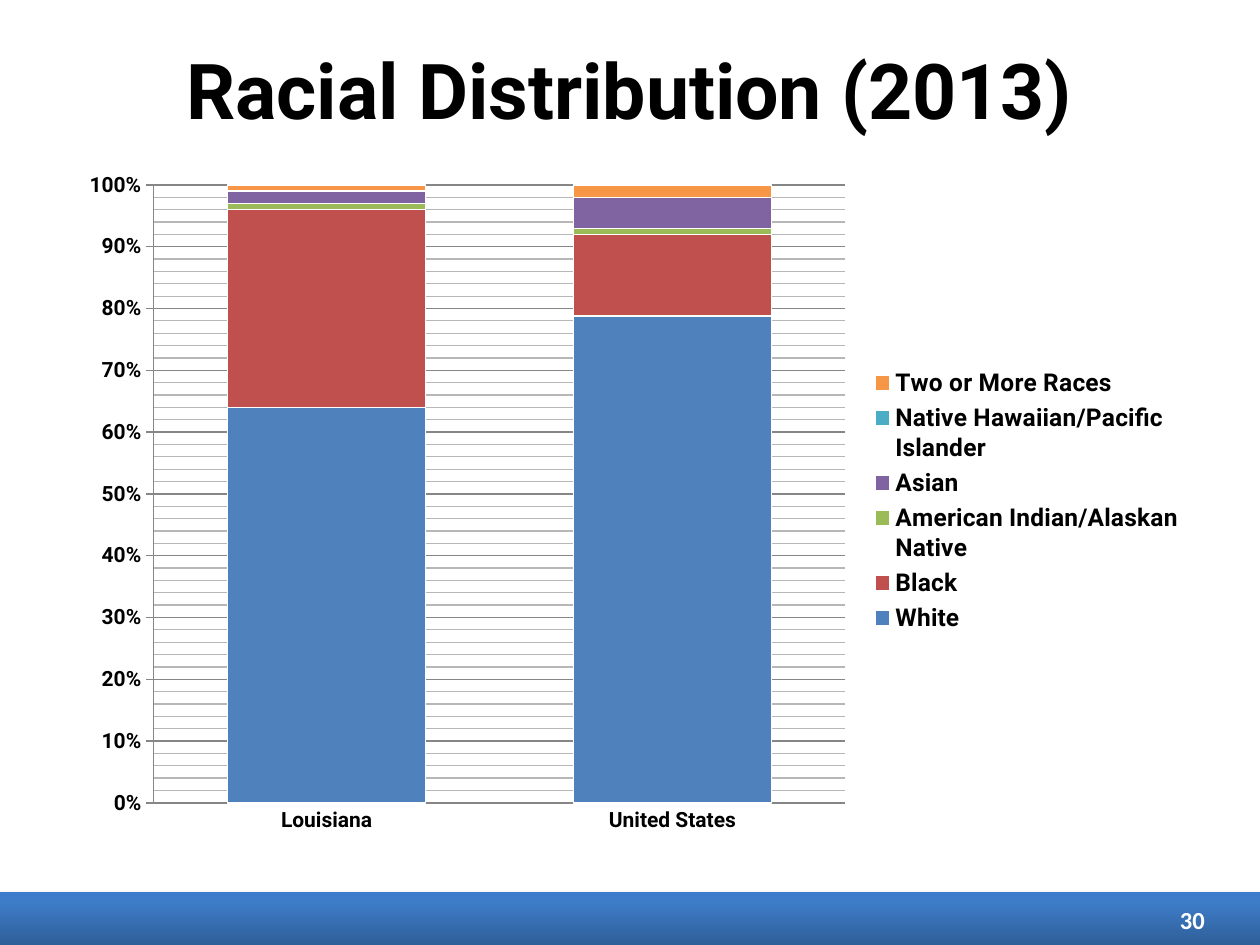
import copy
from dataclasses import dataclass

import lxml.etree
import pptx
import pptx.chart.data
import pptx.dml.color
import pptx.enum.chart
import pptx.enum.shapes
import pptx.enum.text
import pptx.oxml
import pptx.oxml.ns
import pptx.util

Inches = pptx.util.Inches
qn = pptx.oxml.ns.qn


@dataclass(frozen=True)
class Theme:
    font: str = "Roboto"
    number_font: str = "Calibri"
    ink: str = "000000"
    paper: str = "FFFFFF"
    axis: str = "868686"
    minor_grid: str = "B7B7B7"
    band: tuple = ((0, "2F5F99"), (0.8, "3D7CC7"), (1, "3A7CCB"))
    title_size: int = 44
    number_size: int = 14
    legend_size: int = 14
    axis_size: int = 12
    chart_size: int = 10


THEME = Theme()
REGIONS = ("Louisiana", "United States")
RACES = (
    ("White", (64, 78), "4F81BD"),
    ("Black", (32, 13), "C0504D"),
    ("American Indian/Alaskan Native", (1, 1), "9BBB59"),
    ("Asian", (2, 5), "8064A2"),
    ("Native Hawaiian/Pacific Islander", (0, 0), "4BACC6"),
    ("Two or More Races", (1, 2), "F79646"),
)


def rgb(value):
    return pptx.dml.color.RGBColor.from_string(value)


def apply(target, formats):
    for name, value in formats.items():
        setattr(target, name, value)


def style_font(font, size, color=THEME.ink, name=THEME.font, bold=True):
    apply(font, {"size": pptx.util.Pt(size), "bold": bold, "name": name})
    font.color.rgb = rgb(color)


def style_line(line, color, width=0.75):
    line.color.rgb = rgb(color)
    line.width = pptx.util.Pt(width)


def write_line(shape, text, align, **font):
    frame = shape.text_frame
    apply(frame, {"word_wrap": True,
                  "vertical_anchor": pptx.enum.text.MSO_ANCHOR.MIDDLE})
    paragraph = frame.paragraphs[0]
    paragraph.alignment = align
    run = paragraph.add_run()
    run.text = text
    style_font(run.font, **font)


def add_band(slide, box):
    """Footer band with a vertical gradient and a soft shadow."""
    band = slide.shapes.add_shape(pptx.enum.shapes.MSO_SHAPE.RECTANGLE, *box)
    band.line.fill.background()
    band.fill.gradient()
    band.fill.gradient_angle = 90
    stops = band._element.spPr.find(".//" + qn("a:gsLst"))
    stops.insert(1, copy.deepcopy(stops[0]))
    for stop, (position, color) in zip(band.fill.gradient_stops, THEME.band):
        stop.color.rgb = rgb(color)
        stop.position = position
    band.shadow.inherit = False
    effects = band._element.spPr.find(qn("a:effectLst"))
    shadow = lxml.etree.SubElement(
        effects, qn("a:outerShdw"), blurRad="39370", dist="22860",
        dir="5400000", rotWithShape="0")
    color = lxml.etree.SubElement(shadow, qn("a:srgbClr"), val=THEME.ink)
    lxml.etree.SubElement(color, qn("a:alpha"), val="35000")


def place_title(slide, box, text):
    title = slide.shapes.title
    apply(title, dict(zip(("left", "top", "width", "height"), box)))
    write_line(title, text, pptx.enum.text.PP_ALIGN.CENTER,
               size=THEME.title_size)


def add_page_number(slide, box, number):
    page_number = slide.shapes.add_textbox(*box)
    write_line(page_number, number, pptx.enum.text.PP_ALIGN.RIGHT,
               size=THEME.number_size, color=THEME.paper,
               name=THEME.number_font)


def make_layout(left, top, width, height, inner=False):
    """Manual chart layout, in fractions of the chart box."""
    target = '<c:layoutTarget val="inner"/>' if inner else ""
    sizes = "".join(f'<c:{tag} val="{value}"/>' for tag, value in
                    zip("xywh", (left, top, width, height)))
    return pptx.oxml.parse_xml(
        f'<c:layout {pptx.oxml.ns.nsdecls("c")}><c:manualLayout>{target}'
        f'<c:xMode val="edge"/><c:yMode val="edge"/>{sizes}'
        '</c:manualLayout></c:layout>')


def style_gridlines(axis):
    """Minor gridlines take the major line format in a lighter colour."""
    style_line(axis.major_gridlines.format.line, THEME.axis)
    major, minor = (axis._element.find(qn(f"c:{level}Gridlines"))
                    for level in ("major", "minor"))
    minor.append(copy.deepcopy(major.find(qn("c:spPr"))))
    minor.find(".//" + qn("a:srgbClr")).set("val", THEME.minor_grid)


def add_race_chart(slide, box):
    kinds = pptx.enum.chart
    data = pptx.chart.data.CategoryChartData()
    data.categories = REGIONS
    for name, values, _ in RACES:
        data.add_series(name, values)
    chart = slide.shapes.add_chart(
        kinds.XL_CHART_TYPE.COLUMN_STACKED_100, *box, data).chart
    style_font(chart.font, THEME.chart_size, bold=False)
    apply(chart, {"has_title": False, "has_legend": True})

    # Stacked columns
    plot = chart.plots[0]
    apply(plot, {"gap_width": 75, "overlap": 100, "vary_by_categories": False})
    for series, (_, _, color) in zip(plot.series, RACES):
        series.format.fill.solid()
        series.format.fill.fore_color.rgb = rgb(color)
        style_line(series.format.line, THEME.paper)

    # Axes and gridlines
    tick = kinds.XL_TICK_MARK
    for axis, mark in ((chart.category_axis, tick.NONE),
                       (chart.value_axis, tick.OUTSIDE)):
        apply(axis, {"major_tick_mark": mark, "minor_tick_mark": tick.NONE})
        style_font(axis.tick_labels.font, THEME.axis_size)
        style_line(axis.format.line, THEME.axis)
    percent = chart.value_axis
    apply(percent, {"minimum_scale": 0, "maximum_scale": 1, "major_unit": 0.1,
                    "minor_unit": 0.02, "has_major_gridlines": True,
                    "has_minor_gridlines": True})
    apply(percent.tick_labels, {"number_format": "0%",
                                "number_format_is_linked": False})
    style_gridlines(percent)

    # Legend and plot positions
    legend = chart.legend
    apply(legend, {"position": kinds.XL_LEGEND_POSITION.RIGHT,
                   "include_in_layout": False})
    style_font(legend.font, THEME.legend_size)
    for part, index, layout in (
            (chart._chartSpace.chart.plotArea, 0,
             make_layout(0.08, 0.04, 0.61, 0.9, inner=True)),
            (legend._element, 1, make_layout(0.71, 0.3, 0.28, 0.4))):
        for old in part.findall(qn("c:layout")):
            part.remove(old)
        part.insert(index, layout)


def main():
    deck = pptx.Presentation()
    apply(deck, {"slide_width": Inches(10), "slide_height": Inches(7.5)})
    slide = deck.slides.add_slide(deck.slide_layouts[5])
    add_band(slide, (0, Inches(7.08), deck.slide_width, Inches(0.42)))
    place_title(slide, (Inches(0.5), Inches(0.08), Inches(9), Inches(1.25)),
                "Racial Distribution (2013)")
    add_page_number(
        slide, (Inches(7.33), Inches(7.1), Inches(2.33), Inches(0.4)), "30")
    add_race_chart(
        slide, (Inches(0.5), Inches(1.25), Inches(9), Inches(5.45)))
    deck.save("out.pptx")


if __name__ == "__main__":
    main()
